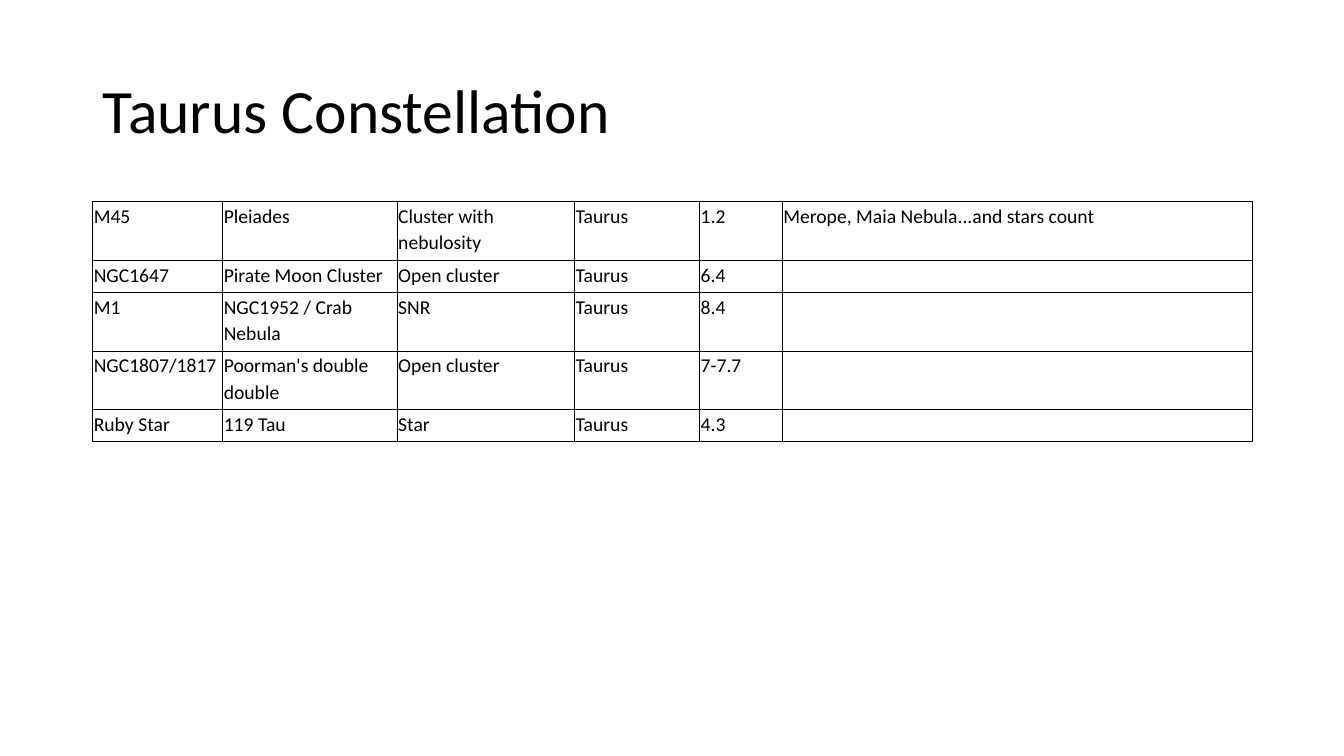
import pptx
import pptx.dml.color
import pptx.enum.text
import pptx.oxml.ns
import pptx.util
from lxml import etree

Inches = pptx.util.Inches
Pt = pptx.util.Pt
qn = pptx.oxml.ns.qn

FONT = "Calibri"
INK = "000000"
COLS = [1.29, 1.73, 1.76, 1.24, 0.82, 4.66]
ROWS = [0.21, 0.21, 0.42, 0.42, 0.21]
OBJECTS = [
    ["M45", "Pleiades", "Cluster with nebulosity", "Taurus", "1.2",
     "Merope, Maia Nebula...and stars count"],
    ["NGC1647", "Pirate Moon Cluster", "Open cluster", "Taurus", "6.4", ""],
    ["M1", "NGC1952 / Crab Nebula", "SNR", "Taurus", "8.4", ""],
    ["NGC1807/1817", "Poorman's double double", "Open cluster", "Taurus", "7-7.7", ""],
    ["Ruby Star", "119 Tau", "Star", "Taurus", "4.3", ""],
]


def rgb(color):
    return pptx.dml.color.RGBColor.from_string(color)


def write(tf, text, size, spacing, color=INK):
    p = tf.paragraphs[0]
    p.alignment = pptx.enum.text.PP_ALIGN.LEFT
    p.line_spacing = spacing
    if not text:
        etree.SubElement(p._p, qn("a:endParaRPr"), sz=str(size * 100))
        return
    r = p.add_run()
    r.text = text
    r.font.name = FONT
    r.font.size = Pt(size)
    r.font.color.rgb = rgb(color)


def add_borders(cell, width=0.5, color=INK):
    tc_pr = cell._tc.get_or_add_tcPr()
    for side in ("a:lnL", "a:lnR", "a:lnT", "a:lnB"):
        ln = etree.SubElement(tc_pr, qn(side), w=str(Pt(width)))
        fill = etree.SubElement(ln, qn("a:solidFill"))
        etree.SubElement(fill, qn("a:srgbClr"), val=color)


def add_title(s, text, x, y, w, h):
    sp = s.shapes.title
    sp.left, sp.top, sp.width, sp.height = (Inches(v) for v in (x, y, w, h))
    tf = sp.text_frame
    tf.word_wrap = True
    tf.vertical_anchor = pptx.enum.text.MSO_ANCHOR.MIDDLE
    write(tf, text, size=44, spacing=0.9)


def add_object_table(s, x, y, w, h):
    table = s.shapes.add_table(
        len(ROWS), len(COLS), Inches(x), Inches(y), Inches(w), Inches(h)).table
    table.first_row = False
    table.horz_banding = False
    for col, width in zip(table.columns, COLS):
        col.width = Inches(width * w / sum(COLS))
    for row, height, texts in zip(table.rows, ROWS, OBJECTS):
        row.height = Inches(height)
        for cell, text in zip(row.cells, texts):
            cell.margin_left = cell.margin_right = cell.margin_top = Inches(0.01)
            cell.margin_bottom = Inches(0.05)
            add_borders(cell)
            cell.fill.background()
            write(cell.text_frame, text, size=14, spacing=1.1)


def main():
    prs = pptx.Presentation()
    prs.slide_width = Inches(13.33)
    prs.slide_height = Inches(7.5)
    s = prs.slides.add_slide(prs.slide_layouts[5])
    add_title(s, "Taurus Constellation", 0.92, 0.4, 11.5, 1.45)
    add_object_table(s, 0.92, 2, 11.5, sum(ROWS))
    prs.save("out.pptx")


if __name__ == "__main__":
    main()
